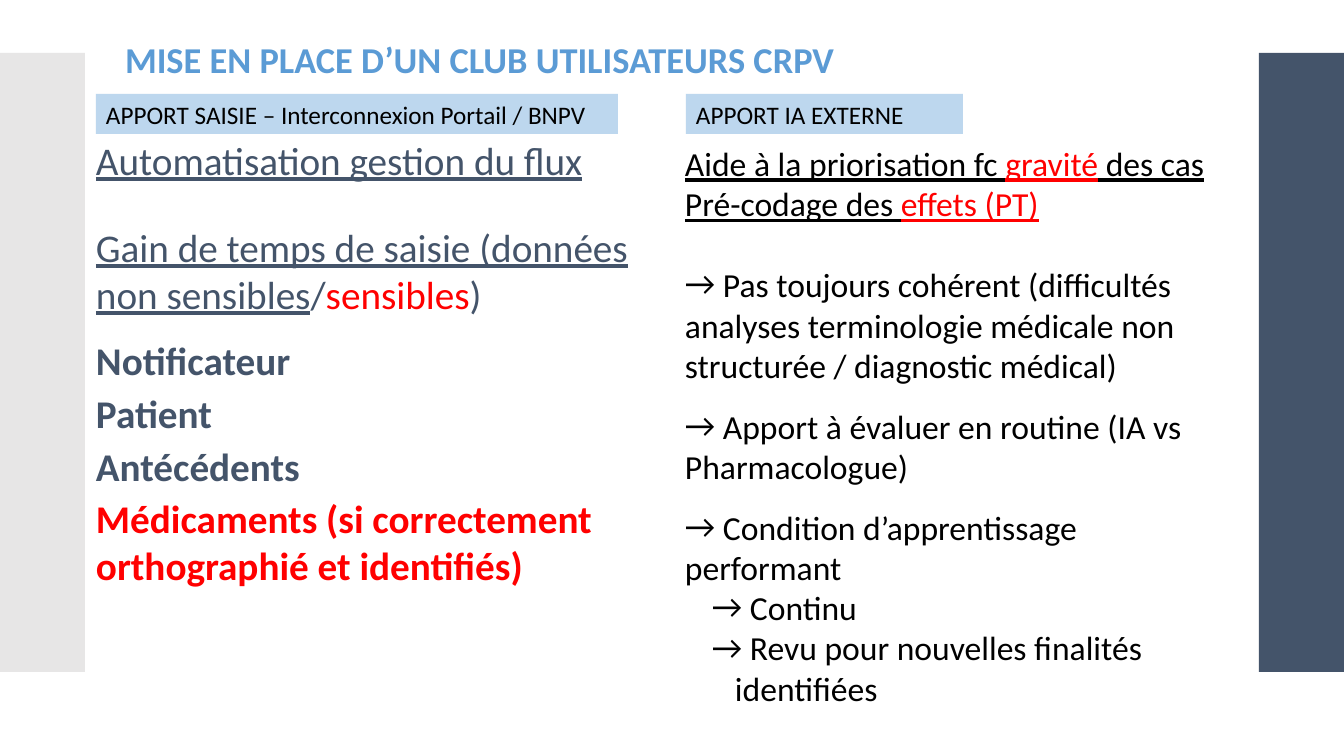
from dataclasses import dataclass

from lxml.etree import SubElement
from pptx import Presentation
from pptx.dml.color import RGBColor
from pptx.enum.shapes import MSO_SHAPE as Shape
from pptx.enum.text import MSO_ANCHOR as Anchor, PP_ALIGN as Align
from pptx.oxml.ns import qn
from pptx.slide import Slide
from pptx.text.text import TextFrame
from pptx.util import Pt

PX = 12192000 / 1344
FONT = "Calibri"
COLORS = {
    "navy": "44546A",
    "grey": "E7E6E6",
    "sky": "BDD7EE",
    "blue": "5B9BD5",
    "red": "FF0000",
    "black": "000000",
}


@dataclass(frozen=True)
class Box:
    left: int
    top: int
    width: int
    height: int

    def emu(self) -> tuple[int, ...]:
        return tuple(round(n * PX) for n in (self.left, self.top, self.width, self.height))


@dataclass(frozen=True)
class Block:
    box: Box
    fill: str
    text: str = ""


@dataclass(frozen=True)
class Span:
    text: str
    color: str
    underline: bool = False
    bold: bool = False


@dataclass(frozen=True)
class Para:
    spans: tuple[Span, ...]
    before: float = 0
    bullet: bool = False
    margin: int = 0
    hanging: int = 0


@dataclass(frozen=True)
class Column:
    box: Box
    size: int
    inset: tuple[int, int]
    paras: tuple[Para, ...]


def heading(text: str, color: str, before: float) -> Para:
    return Para((Span(text, color, bold=True),), before)


def arrow(text: str, before: float = 0, margin: int = 0, hanging: int = 0) -> Para:
    return Para((Span(text, "black"),), before, True, margin, hanging)


BLOCKS = (
    Block(Box(1259, 53, 85, 619), "navy"),
    Block(Box(0, 53, 85, 619), "grey"),
    Block(Box(96, 94, 522, 40), "sky", "APPORT SAISIE – Interconnexion Portail / BNPV"),
    Block(Box(686, 94, 277, 40), "sky", "APPORT IA EXTERNE"),
)

COLUMNS = (
    Column(Box(96, 136, 570, 592), 28, (0, 0), (
        Para((Span("Automatisation gestion du flux", "navy", True),)),
        Para((
            Span("Gain de temps de saisie (données non sensibles", "navy", True),
            Span("/", "navy"),
            Span("sensibles", "red"),
            Span(")", "navy"),
        ), 28.5),
        heading("Notificateur", "navy", 14),
        heading("Patient", "navy", 4),
        heading("Antécédents", "navy", 4),
        heading("Médicaments (si correctement orthographié et identifiés)", "red", 4),
    )),
    Column(Box(675, 138, 576, 581), 24, (10, 5), (
        Para((
            Span("Aide à la priorisation fc ", "black", True),
            Span("gravité", "red", True),
            Span(" des cas", "black", True),
        )),
        Para((Span("Pré-codage des ", "black", True), Span("effets (PT)", "red", True))),
        arrow(" Pas toujours cohérent (difficultés analyses terminologie médicale non "
              "structurée / diagnostic médical)", 29),
        arrow(" Apport à évaluer en routine (IA vs Pharmacologue)", 14.5),
        arrow(" Condition d’apprentissage performant", 14.5),
        arrow(" Continu", margin=50, hanging=23),
        arrow(" Revu pour nouvelles finalités identifiées", margin=50, hanging=23),
    )),
)


def style(font, size: int, color: str, bold: bool = False, underline: bool = False) -> None:
    font.name = FONT
    font.size = Pt(size)
    font.bold = bold
    font.underline = underline
    font.color.rgb = RGBColor.from_string(COLORS[color])


def set_insets(frame: TextFrame, across: int, down: int) -> None:
    frame.word_wrap = True
    frame.margin_left = frame.margin_right = round(across * PX)
    frame.margin_top = frame.margin_bottom = round(down * PX)


def draw_title(page: Slide, box: Box, text: str) -> None:
    title = page.shapes.title
    title.left, title.top, title.width, title.height = box.emu()
    frame = title.text_frame
    frame.text = text
    set_insets(frame, 0, 0)
    frame.vertical_anchor = Anchor.TOP
    para = frame.paragraphs[0]
    para.alignment = Align.LEFT
    para.line_spacing = 0.9
    style(para.runs[0].font, 26, "blue", bold=True)


def draw_block(page: Slide, block: Block) -> None:
    shape = page.shapes.add_shape(Shape.RECTANGLE, *block.box.emu())
    shape.shadow.inherit = False
    shape.fill.solid()
    shape.fill.fore_color.rgb = RGBColor.from_string(COLORS[block.fill])
    shape.line.fill.background()
    if block.text:
        frame = shape.text_frame
        frame.text = block.text
        set_insets(frame, 10, 5)
        frame.vertical_anchor = Anchor.MIDDLE
        frame.paragraphs[0].alignment = Align.LEFT
        style(frame.paragraphs[0].runs[0].font, 18, "black")


def draw_column(page: Slide, column: Column) -> None:
    frame = page.shapes.add_textbox(*column.box.emu()).text_frame
    set_insets(frame, *column.inset)
    for index, item in enumerate(column.paras):
        para = frame.add_paragraph() if index else frame.paragraphs[0]
        if item.before:
            para.space_before = Pt(item.before)
        if item.bullet:
            properties = para._p.get_or_add_pPr()
            properties.set("marL", str(round(item.margin * PX)))
            properties.set("indent", str(round(-item.hanging * PX)))
            SubElement(properties, qn("a:buFont"), typeface=FONT)
            SubElement(properties, qn("a:buChar"), char="→")
        for span in item.spans:
            run = para.add_run()
            run.text = span.text
            style(run.font, column.size, span.color, span.bold, span.underline)


def main() -> None:
    deck = Presentation()
    deck.slide_width = round(1344 * PX)
    deck.slide_height = round(756 * PX)
    page = deck.slides.add_slide(deck.slide_layouts.get_by_name("Title Only"))
    draw_title(page, Box(125, 42, 1005, 52), "MISE EN PLACE D’UN CLUB UTILISATEURS CRPV")
    for block in BLOCKS:
        draw_block(page, block)
    for column in COLUMNS:
        draw_column(page, column)
    deck.save("out.pptx")


if __name__ == "__main__":
    main()
